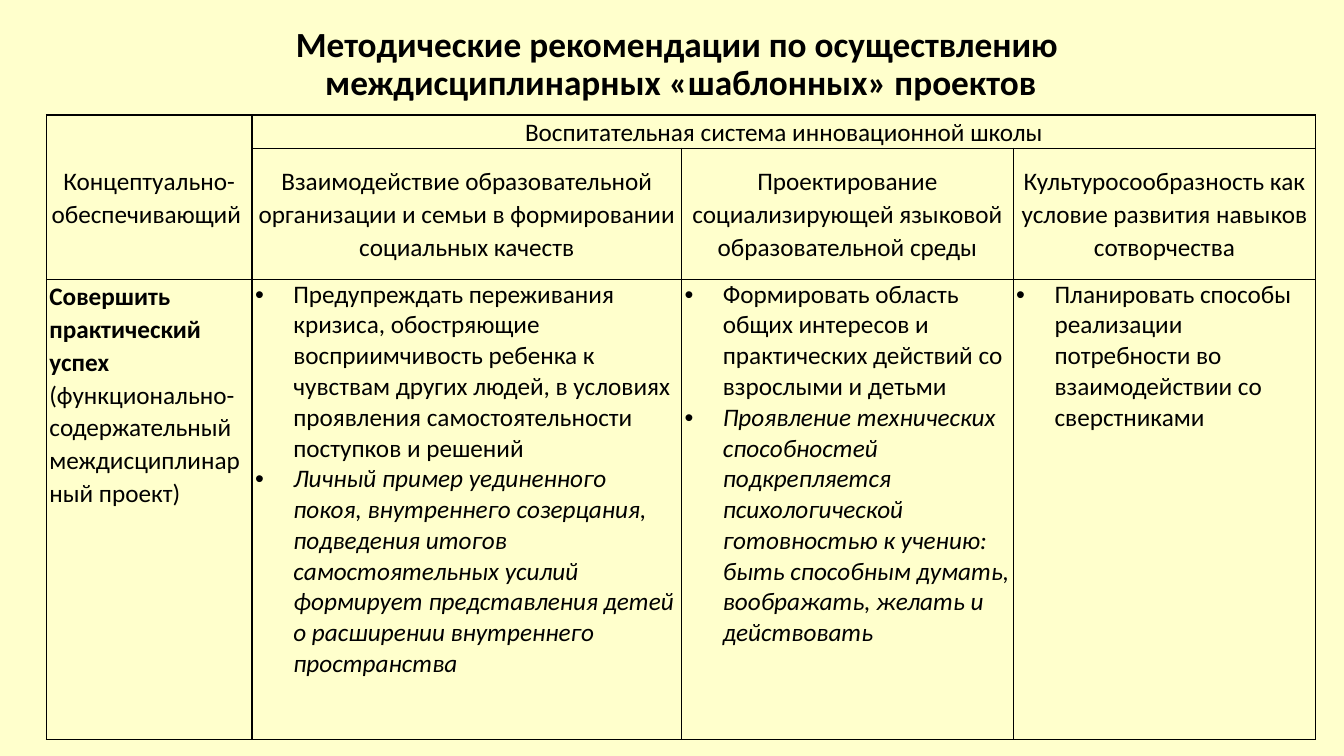
from dataclasses import dataclass

from lxml import etree
from pptx import Presentation
from pptx.dml.color import RGBColor
from pptx.enum.text import MSO_ANCHOR, PP_ALIGN
from pptx.oxml.ns import qn
from pptx.table import Table, _Cell
from pptx.text.text import _Paragraph
from pptx.util import Inches, Pt

CENTER, JUSTIFY, LEFT = PP_ALIGN.CENTER, PP_ALIGN.JUSTIFY, PP_ALIGN.LEFT
MIDDLE, TOP = MSO_ANCHOR.MIDDLE, MSO_ANCHOR.TOP

COLORS = {"background": "FFFFCC", "text": "000000", "border": "000000"}
FONT = "Calibri"
TITLE_SIZE, TABLE_SIZE = 25.2, 18
TITLE = "Методические рекомендации по осуществлению \vмеждисциплинарных «шаблонных» проектов"
COLUMN_WIDTHS = (2.04, 4.26, 3.29, 3.0)
ROW_HEIGHTS = (0.33, 1.3, 4.57)
BULLET_INDENT = 0.38


@dataclass(frozen=True)
class Header:
    row: int
    column: int
    text: str
    row_span: int = 1
    column_span: int = 1


@dataclass(frozen=True)
class Advice:
    """A column's bullets; the second one, if any, is in italics."""
    column: int
    bullets: tuple[str, ...]


HEADERS = (
    Header(0, 0, "Концептуально-обеспечивающий ", row_span=2),
    Header(0, 1, "Воспитательная система инновационной школы", column_span=3),
    Header(1, 1, "Взаимодействие образовательной организации и семьи "
                 "в формировании социальных качеств"),
    Header(1, 2, "Проектирование социализирующей языковой образовательной среды"),
    Header(1, 3, "Культуросообразность как условие развития навыков сотворчества"),
)
GOAL = "Совершить практический успех "
GOAL_NOTE = "(функционально-содержательный междисциплинарный проект)"
ADVICE = (
    Advice(1, (
        "Предупреждать переживания кризиса, обостряющие восприимчивость ребенка к чувствам "
        "других людей, в условиях проявления самостоятельности поступков и решений",
        "Личный пример уединенного покоя, внутреннего созерцания, подведения итогов "
        "самостоятельных усилий формирует представления детей о расширении внутреннего "
        "пространства",
    )),
    Advice(2, (
        "Формировать область общих интересов и практических действий со взрослыми и детьми",
        "Проявление технических способностей подкрепляется психологической готовностью "
        "к учению: быть способным думать, воображать, желать и действовать",
    )),
    Advice(3, (
        "Планировать способы реализации потребности во взаимодействии со сверстниками",
    )),
)


def format_paragraph(paragraph: _Paragraph, size: float, align: PP_ALIGN, spacing: float,
                     bold: bool = False, italic: bool = False) -> None:
    paragraph.alignment = align
    paragraph.line_spacing = spacing
    for run in paragraph.runs:
        font = run.font
        font.name, font.size = FONT, Pt(size)
        font.bold, font.italic = bold, italic
        font.color.rgb = RGBColor.from_string(COLORS["text"])


def add_bullet(paragraph: _Paragraph) -> None:
    properties = paragraph._p.get_or_add_pPr()
    properties.set("marL", str(Inches(BULLET_INDENT)))
    properties.set("indent", str(-Inches(BULLET_INDENT)))
    etree.SubElement(properties, qn("a:buFont"), typeface="Arial")
    etree.SubElement(properties, qn("a:buChar"), char="•")


def format_cell(cell: _Cell, anchor: MSO_ANCHOR) -> None:
    cell.margin_left = cell.margin_right = Inches(0.03)
    cell.margin_top = cell.margin_bottom = 0
    cell.vertical_anchor = anchor
    cell.fill.background()
    properties = cell._tc.get_or_add_tcPr()
    for index, side in enumerate(("a:lnL", "a:lnR", "a:lnT", "a:lnB")):
        line = etree.Element(qn(side), w=str(Pt(1)))
        fill = etree.SubElement(line, qn("a:solidFill"))
        etree.SubElement(fill, qn("a:srgbClr"), val=COLORS["border"])
        properties.insert(index, line)


def fill_headers(table: Table) -> None:
    for header in HEADERS:
        cell = table.cell(header.row, header.column)
        if header.row_span > 1 or header.column_span > 1:
            cell.merge(table.cell(header.row + header.row_span - 1,
                                  header.column + header.column_span - 1))
        cell.text_frame.text = header.text
        format_paragraph(cell.text_frame.paragraphs[0], TABLE_SIZE, CENTER, 1.07)


def fill_advice(table: Table) -> None:
    goal = table.cell(2, 0).text_frame.paragraphs[0]
    goal.text = GOAL
    goal.add_run().text = GOAL_NOTE
    format_paragraph(goal, TABLE_SIZE, JUSTIFY, 1.07)
    goal.runs[0].font.bold = True
    for advice in ADVICE:
        text_frame = table.cell(2, advice.column).text_frame
        text_frame.text = "\n".join(advice.bullets)
        for index, paragraph in enumerate(text_frame.paragraphs):
            format_paragraph(paragraph, TABLE_SIZE, LEFT, 1.0, italic=index == 1)
            add_bullet(paragraph)


def main() -> None:
    presentation = Presentation()
    presentation.slide_width, presentation.slide_height = Inches(13.33), Inches(7.5)
    slide = presentation.slides.add_slide(presentation.slide_layouts[5])
    background = slide.background.fill
    background.solid()
    background.fore_color.rgb = RGBColor.from_string(COLORS["background"])

    title = slide.shapes.title
    title.left, title.top = Inches(0.46), Inches(0.26)
    title.width, title.height = Inches(12.59), Inches(0.77)
    title.text_frame.text = TITLE
    title.text_frame.vertical_anchor = MIDDLE
    format_paragraph(title.text_frame.paragraphs[0], TITLE_SIZE, CENTER, 0.9, bold=True)

    table = slide.shapes.add_table(
        len(ROW_HEIGHTS), len(COLUMN_WIDTHS), Inches(0.46), Inches(1.14),
        Inches(sum(COLUMN_WIDTHS)), Inches(sum(ROW_HEIGHTS))).table
    table.first_row = table.horz_banding = False
    for column, width in zip(table.columns, COLUMN_WIDTHS):
        column.width = Inches(width)
    for index, (row, height) in enumerate(zip(table.rows, ROW_HEIGHTS)):
        row.height = Inches(height)
        for cell in row.cells:
            format_cell(cell, TOP if index == 2 else MIDDLE)
    fill_headers(table)
    fill_advice(table)
    presentation.save("out.pptx")


if __name__ == "__main__":
    main()
